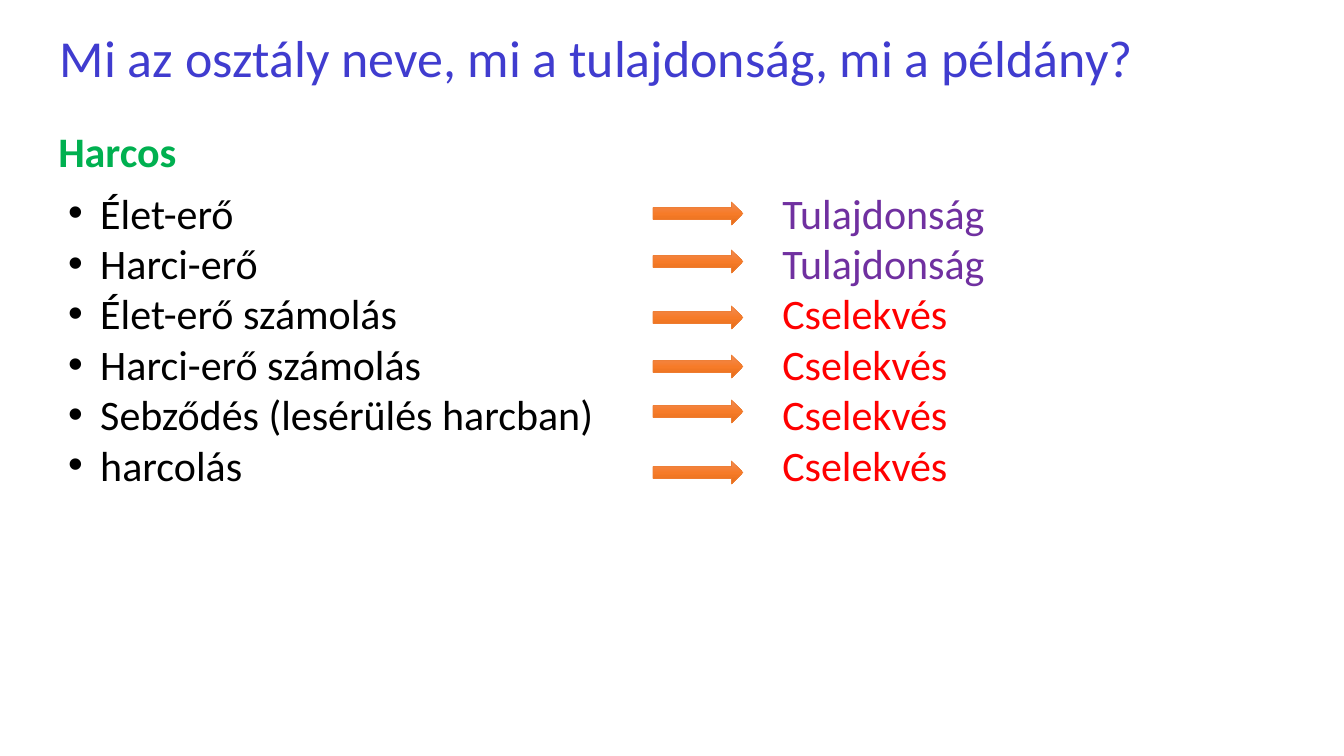
"""Build the slide that sorts a warrior's class features into properties and actions."""
from copy import deepcopy

from lxml.etree import SubElement
from pptx import Presentation
from pptx.dml.color import RGBColor
from pptx.enum.shapes import MSO_SHAPE
from pptx.enum.text import MSO_ANCHOR, MSO_AUTO_SIZE
from pptx.oxml.ns import qn
from pptx.util import Emu, Pt

PIXEL = 914400 // 84
BLACK, PURPLE, RED = "000000", "7030A0", "FF0000"


def color(value):
    return RGBColor.from_string(value)


def add_text(slide, box, lines, size=36, bold=False, bullet_indent=0, **frame_format):
    shape = slide.shapes.add_textbox(*[Emu(length * PIXEL) for length in box])
    frame = shape.text_frame
    for name, value in {"word_wrap": True, **frame_format}.items():
        setattr(frame, name, value)
    for index, (text, text_color) in enumerate(lines):
        paragraph = frame.add_paragraph() if index else frame.paragraphs[0]
        if bullet_indent:
            properties = paragraph._p.get_or_add_pPr()
            properties.set("marL", str(bullet_indent * PIXEL))
            properties.set("indent", str(-bullet_indent * PIXEL))
            SubElement(properties, qn("a:buFont"), typeface="Arial")
            SubElement(properties, qn("a:buChar"), char="•")
        run = paragraph.add_run()
        run.text = text
        for name, value in {"name": "Calibri", "size": Pt(size), "bold": bold}.items():
            setattr(run.font, name, value)
        run.font.color.rgb = color(text_color)
    return frame


presentation = Presentation()
presentation.slide_width = Emu(1344 * PIXEL)
presentation.slide_height = Emu(756 * PIXEL)
slide = presentation.slides.add_slide(presentation.slide_layouts[6])

title = add_text(
    slide, (60, 23, 1100, 66),
    [("Mi az osztály neve, mi a tulajdonság, mi a példány?", "403CCF")],
    size=44.5, margin_left=0, margin_top=0, margin_right=0, margin_bottom=0,
)
title.paragraphs[0].line_spacing = Pt(55.5)

add_text(slide, (50, 121, 401, 60), [("Harcos", "00B050")], bold=True,
         vertical_anchor=MSO_ANCHOR.MIDDLE, auto_size=MSO_AUTO_SIZE.SHAPE_TO_FIT_TEXT)

features = ["Élet-erő", "Harci-erő", "Élet-erő számolás", "Harci-erő számolás",
            "Sebződés (lesérülés harcban)", "harcolás"]
add_text(slide, (60, 183, 593, 314), [(feature, BLACK) for feature in features],
         bullet_indent=32, auto_size=MSO_AUTO_SIZE.SHAPE_TO_FIT_TEXT)

kinds = [("Tulajdonság", PURPLE)] * 2 + [("Cselekvés", RED)] * 4
add_text(slide, (774, 183, 570, 314), kinds, auto_size=MSO_AUTO_SIZE.SHAPE_TO_FIT_TEXT)

gradient = [(0, "F18C57"), (0.5, "F67B28"), (1, "E56C19")]
for top in (202, 250, 306, 355, 400, 461):
    arrow = slide.shapes.add_shape(
        MSO_SHAPE.RIGHT_ARROW, *[Emu(length * PIXEL) for length in (653, top, 90, 23)])
    arrow.shadow.inherit = False
    arrow.fill.gradient()
    arrow.fill.gradient_angle = 270
    stop_list = arrow._element.spPr.find(qn("a:gradFill")).find(qn("a:gsLst"))
    stop_list.insert(1, deepcopy(stop_list[0]))
    for stop, (position, stop_color) in zip(arrow.fill.gradient_stops, gradient):
        stop.position = position
        stop.color.rgb = color(stop_color)
    arrow.line.color.rgb = color("ED7D31")
    arrow.line.width = Pt(0.5)

presentation.save("out.pptx")
